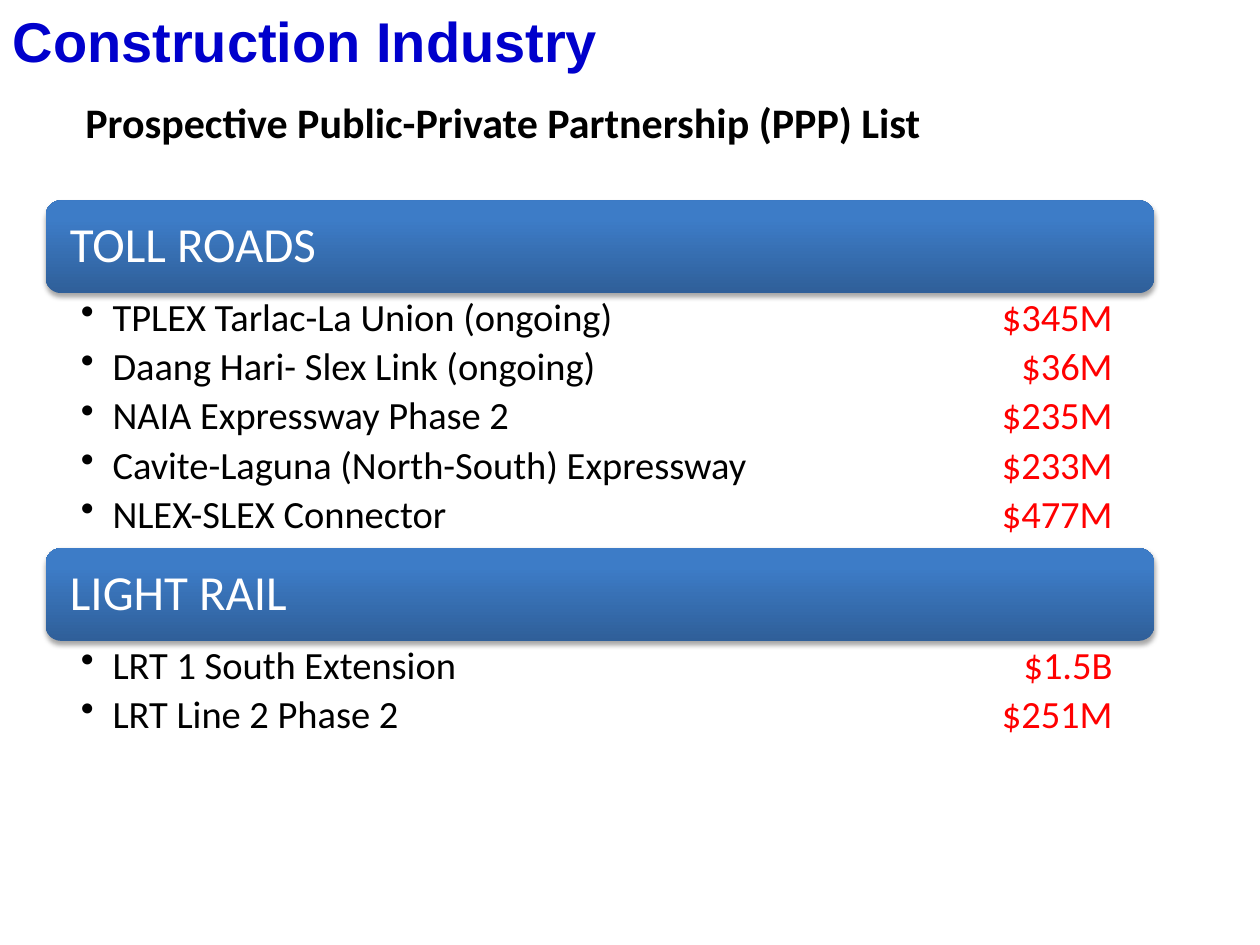
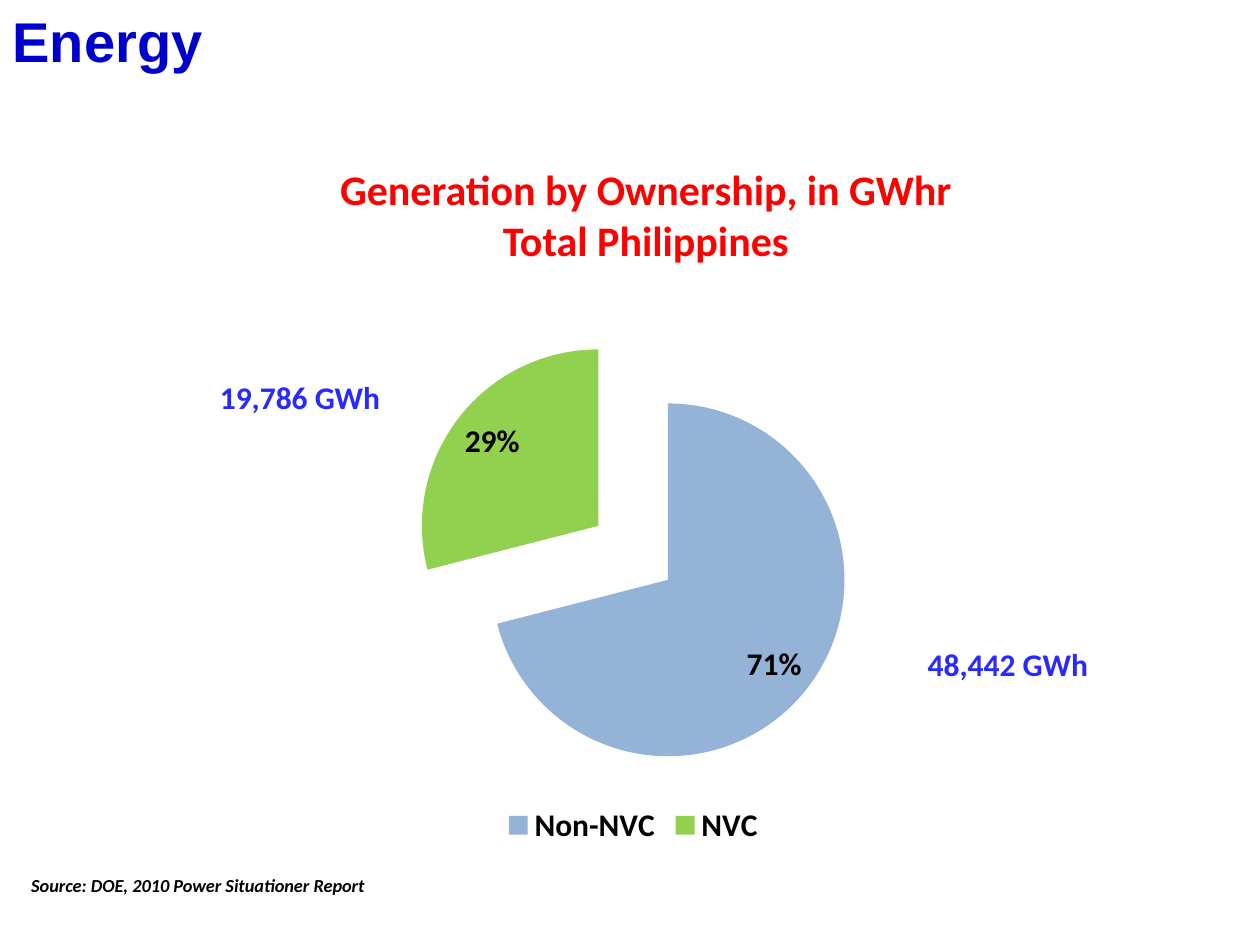
from pptx import Presentation
from pptx.chart.data import CategoryChartData
from pptx.dml.color import RGBColor
from pptx.enum.chart import XL_CHART_TYPE, XL_LABEL_POSITION, XL_LEGEND_POSITION
from pptx.enum.shapes import MSO_SHAPE
from pptx.enum.text import MSO_ANCHOR, MSO_AUTO_SIZE, PP_ALIGN
from pptx.oxml import parse_xml
from pptx.oxml.ns import nsdecls, qn
from pptx.util import Cm, Pt

COLORS = {
    "title": "0000CC",
    "text": "000000",
    "amount": "FF0000",
    "quantity": "2929FF",
    "band_text": "FFFFFF",
    "band_bottom": "2F5F99",
    "band_top": "3D7CC7",
    "Non-NVC": "95B3D7",
    "NVC": "92D050",
}


def style_font(font, size, color, bold=False, name="Calibri"):
    font.name = name
    font.size = Pt(size)
    font.bold = bold
    font.color.rgb = RGBColor.from_string(COLORS[color])


def add_text(slide, box, lines, size, color, align=PP_ALIGN.LEFT):
    shape = slide.shapes.add_textbox(*[Cm(length) for length in box])
    frame = shape.text_frame
    frame.word_wrap = True
    frame.text = "\n".join(lines)
    for paragraph in frame.paragraphs:
        paragraph.alignment = align
        style_font(paragraph.runs[0].font, size, color, bold=True)
    return frame


presentation = Presentation()
presentation.slide_width = Cm(25.4)
presentation.slide_height = Cm(19.05)

slides = []
for heading in ["Construction Industry", "Energy"]:
    slide = presentation.slides.add_slide(presentation.slide_layouts[5])
    title = slide.shapes.title
    title.left, title.top, title.width, title.height = Cm(0), Cm(0), Cm(15), Cm(1.83)
    title.text_frame.text = heading
    title.text_frame.auto_size = MSO_AUTO_SIZE.NONE
    title.text_frame.vertical_anchor = MSO_ANCHOR.TOP
    paragraph = title.text_frame.paragraphs[0]
    paragraph.alignment = PP_ALIGN.LEFT
    style_font(paragraph.runs[0].font, 32, "title", bold=True, name="Arial")
    slides.append(slide)
construction, energy = slides

add_text(construction, (1.47, 1.83, 18.62, 1.27),
         ["Prospective Public-Private Partnership (PPP) List"], 24, "text")

project_groups = [
    ("TOLL ROADS", 4.04, 5.16, [
        ("TPLEX Tarlac-La Union (ongoing)", "$345M"),
        ("Daang Hari- Slex Link (ongoing)", "$36M"),
        ("NAIA Expressway Phase 2", "$235M"),
        ("Cavite-Laguna (North-South) Expressway", "$233M"),
        ("NLEX-SLEX Connector", "$477M"),
    ]),
    ("LIGHT RAIL", 11.05, 2.08, [
        ("LRT 1 South Extension", "$1.5B"),
        ("LRT Line 2 Phase 2", "$251M"),
    ]),
]
band_left, band_width, band_height = 0.92, 22.35, 1.87

for group_name, top, list_height, projects in project_groups:
    band = construction.shapes.add_shape(
        MSO_SHAPE.ROUNDED_RECTANGLE, Cm(band_left), Cm(top), Cm(band_width), Cm(band_height))
    band.line.fill.background()
    band.fill.gradient()
    band.fill.gradient_angle = 90
    stops = band.fill.gradient_stops
    for stop, position, color in zip(stops, (0, 0.8), ("band_bottom", "band_top")):
        stop.position = position
        stop.color.rgb = RGBColor.from_string(COLORS[color])
    band.shadow.inherit = False
    effects = band._element.spPr.find(qn("a:effectLst"))
    effects.append(parse_xml(
        f'<a:outerShdw {nsdecls("a")} blurRad="{Pt(3.1)}" dist="{Pt(1.8)}" dir="5400000" '
        f'rotWithShape="0"><a:srgbClr val="{COLORS["text"]}"><a:alpha val="35000"/>'
        '</a:srgbClr></a:outerShdw>'))
    band.text_frame.text = group_name
    band.text_frame.margin_left = Cm(0.4)
    band.text_frame.vertical_anchor = MSO_ANCHOR.MIDDLE
    paragraph = band.text_frame.paragraphs[0]
    paragraph.alignment = PP_ALIGN.LEFT
    paragraph.line_spacing = 0.9
    style_font(paragraph.runs[0].font, 28, "band_text")

    project_list = construction.shapes.add_textbox(
        Cm(band_left), Cm(top + band_height), Cm(band_width), Cm(list_height))
    frame = project_list.text_frame
    frame.word_wrap = True
    frame.margin_left, frame.margin_right = Cm(0.71), Cm(0.2)
    frame.margin_top = frame.margin_bottom = Cm(0.1)
    frame.text = "\n".join(project + "\t" for project, amount in projects)
    for paragraph, (project, amount) in zip(frame.paragraphs, projects):
        properties = paragraph._p.get_or_add_pPr()
        properties.set("marL", str(Cm(0.64)))
        properties.set("indent", str(Cm(-0.64)))
        properties.append(parse_xml(f'<a:buChar {nsdecls("a")} char="•"/>'))
        properties.append(parse_xml(
            f'<a:tabLst {nsdecls("a")}><a:tab pos="{Cm(20.95)}" algn="r"/></a:tabLst>'))
        paragraph.line_spacing = 0.9
        paragraph.space_after = Pt(4.4)
        style_font(paragraph.runs[0].font, 22, "text")
        amount_run = paragraph.add_run()
        amount_run.text = amount
        style_font(amount_run.font, 22, "amount")

source = add_text(energy, (0.38, 17.5, 7.42, 0.71),
                  ["Source: DOE, 2010 Power Situationer Report"], 10.5, "text")
source.paragraphs[0].runs[0].font.italic = True

ownership = CategoryChartData(number_format="0%")
ownership.categories = ["Non-NVC", "NVC"]
ownership.add_series("Series 1", (0.71, 0.29))
chart = energy.shapes.add_chart(
    XL_CHART_TYPE.PIE, Cm(4.65), Cm(6.35), Cm(16.23), Cm(10.8), ownership).chart
chart.has_title = False
style_font(chart.font, 18, "text")
chart.has_legend = True
chart.legend.position = XL_LEGEND_POSITION.BOTTOM
chart.legend.include_in_layout = False
style_font(chart.legend.font, 18, "text", bold=True)
plot = chart.plots[0]
plot.vary_by_categories = True
plot.has_data_labels = True
labels = plot.data_labels
labels.show_value = True
labels.show_percentage = False
labels.number_format = "0%"
labels.number_format_is_linked = False
labels.position = XL_LABEL_POSITION.INSIDE_END
style_font(labels.font, 18, "text", bold=True)
series = plot.series[0]
for index, owner in enumerate(plot.categories):
    fill = series.points[index].format.fill
    fill.solid()
    fill.fore_color.rgb = RGBColor.from_string(COLORS[owner])
series._element.find(qn("c:tx")).addnext(
    parse_xml(f'<c:explosion {nsdecls("c")} val="25"/>'))

add_text(energy, (5.72, 3.18, 14.6, 2.31),
         ["Generation by Ownership, in GWhr", "Total Philippines"],
         24, "amount", PP_ALIGN.CENTER)
for left, top, quantity in [(17.88, 12.88, "48,442 GWh"), (3.61, 7.49, "19,786 GWh")]:
    add_text(energy, (left, top, 4.88, 1.02), [quantity], 18, "quantity", PP_ALIGN.CENTER)

presentation.save("out.pptx")
